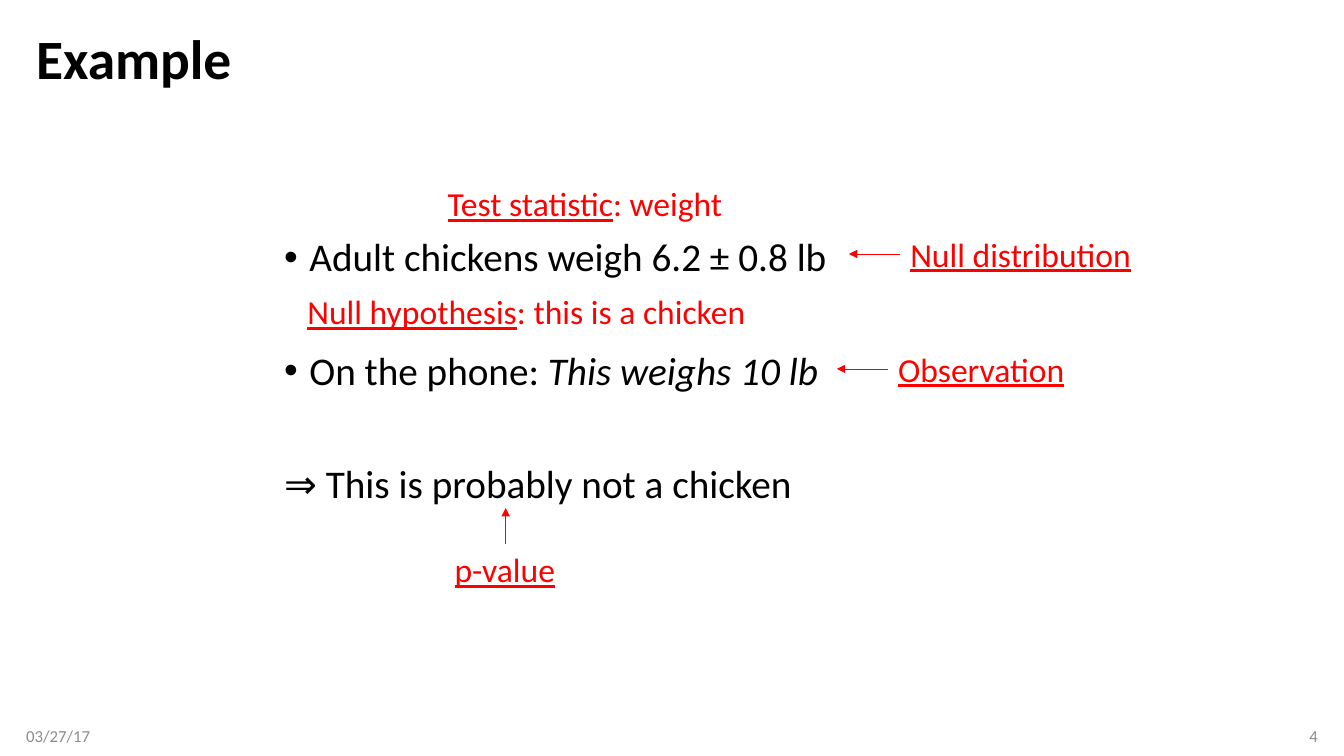
from pptx import Presentation
from pptx.dml.color import RGBColor
from pptx.enum.shapes import MSO_CONNECTOR as Connector
from pptx.enum.text import MSO_ANCHOR as Anchor, MSO_AUTO_SIZE as AutoSize, PP_ALIGN as Align
from pptx.oxml.ns import qn
from pptx.util import Inches, Pt
from lxml.etree import SubElement

BLACK = RGBColor(0x00, 0x00, 0x00)
RED = RGBColor(0xFF, 0x00, 0x00)
GREY = RGBColor(0x8C, 0x8C, 0x8C)
FONT = "Calibri"
LABEL_HEIGHT = 0.5
LEFT_SIDE, TOP_SIDE = 1, 0


def add_text_frame(slide, left, top, width, height):
    """Add a wrapping text box and return its frame."""
    box = slide.shapes.add_textbox(Inches(left), Inches(top), Inches(width), Inches(height))
    box.text_frame.word_wrap = True
    return box.text_frame


def write_runs(paragraph, texts, size, color):
    """Write the texts as equally styled runs and return them."""
    paragraph.text = texts[0]
    for text in texts[1:]:
        paragraph.add_run().text = text
    for run in paragraph.runs:
        run.font.name, run.font.size = FONT, Pt(size)
        run.font.color.rgb = color
    return paragraph.runs


def add_title(slide, left, top, width, height):
    """Place the bold slide title."""
    frame = add_text_frame(slide, left, top, width, height)
    frame.vertical_anchor = Anchor.MIDDLE
    frame.paragraphs[0].line_spacing = 0.9
    title, = write_runs(frame.paragraphs[0], ["Example"], 39.6, BLACK)
    title.font.bold = True


def add_bullet(paragraph):
    """Give the paragraph a hanging round bullet."""
    properties = paragraph._p.get_or_add_pPr()
    properties.set("marL", str(Inches(0.25)))
    properties.set("indent", str(-Inches(0.25)))
    SubElement(properties, qn("a:buFont"), typeface="Arial")
    SubElement(properties, qn("a:buChar"), char="•")


def add_argument(slide, left, top, width, height):
    """Place the two bulleted premises and the conclusion."""
    frame = add_text_frame(slide, left, top, width, height)
    frame.margin_top = Inches(1.18)
    premise = frame.paragraphs[0]
    observation, conclusion = frame.add_paragraph(), frame.add_paragraph()
    write_runs(premise, ["Adult chickens weigh 6.2 ± 0.8 lb"], 28, BLACK)
    quote = write_runs(observation, ["On the phone: ", "This weighs 10 lb"], 28, BLACK)[1]
    quote.font.italic = True
    write_runs(conclusion, ["⇒ This is probably not a chicken"], 28, BLACK)
    for paragraph in frame.paragraphs:
        paragraph.line_spacing = 0.9
    for paragraph in (observation, conclusion):
        paragraph.space_before = Pt(50.75)
    for paragraph in (premise, observation):
        add_bullet(paragraph)


def add_label(slide, left, top, width, term, detail=""):
    """Place a red label with an underlined term and return its box."""
    label = slide.shapes.add_textbox(Inches(left), Inches(top), Inches(width), Inches(LABEL_HEIGHT))
    frame = label.text_frame
    frame.word_wrap = False
    frame.auto_size = AutoSize.SHAPE_TO_FIT_TEXT
    runs = write_runs(frame.paragraphs[0], [term, detail] if detail else [term], 24, RED)
    runs[0].font.underline = True
    return label


def add_arrow(slide, label, side, dx, dy):
    """Draw a thin red arrow from a side of the label."""
    arrow = slide.shapes.add_connector(Connector.STRAIGHT, 0, 0, 0, 0)
    arrow.begin_connect(label, side)
    arrow.end_x = arrow.begin_x + Inches(dx)
    arrow.end_y = arrow.begin_y + Inches(dy)
    arrow.line.color.rgb = RED
    arrow.line.width = Pt(0.5)
    SubElement(arrow.line._get_or_add_ln(), qn("a:tailEnd"), type="triangle")
    SubElement(arrow._element.spPr, qn("a:effectLst"))


def add_annotations(slide):
    """Place the statistical terms around the argument."""
    add_label(slide, 4.34, 1.77, 2.95, "Test statistic", ": weight")
    add_label(slide, 2.95, 2.84, 4.59, "Null hypothesis", ": this is a chicken")
    distribution = add_label(slide, 8.93, 2.27, 2.41, "Null distribution")
    observation = add_label(slide, 8.81, 3.41, 1.87, "Observation")
    p_value = add_label(slide, 4.41, 5.4, 1.21, "p-value")
    for label in (distribution, observation):
        add_arrow(slide, label, LEFT_SIDE, -0.51, 0)
    add_arrow(slide, p_value, TOP_SIDE, 0, -0.36)


def add_footer(slide, left, top, width, height):
    """Place the date at the left end and the page number at the right."""
    part_width = 3
    date = add_text_frame(slide, left, top, part_width, height)
    number = add_text_frame(slide, left + width - part_width, top, part_width, height)
    for frame, text in ((date, "03/27/17"), (number, "4")):
        frame.vertical_anchor = Anchor.MIDDLE
        write_runs(frame.paragraphs[0], [text], 12, GREY)
    date.margin_left = 0
    number.margin_right = 0
    number.paragraphs[0].alignment = Align.RIGHT


def main():
    """Build the slide and save it."""
    deck = Presentation()
    deck.slide_width, deck.slide_height = Inches(13.33), Inches(7.5)
    slide = deck.slides.add_slide(deck.slide_layouts[6])
    add_title(slide, 0.26, 0.25, 12.81, 0.72)
    add_argument(slide, 2.72, 1.18, 10.35, 5.91)
    add_annotations(slide)
    add_footer(slide, 0.26, 7.1, 12.81, 0.4)
    deck.save("out.pptx")


if __name__ == "__main__":
    main()
